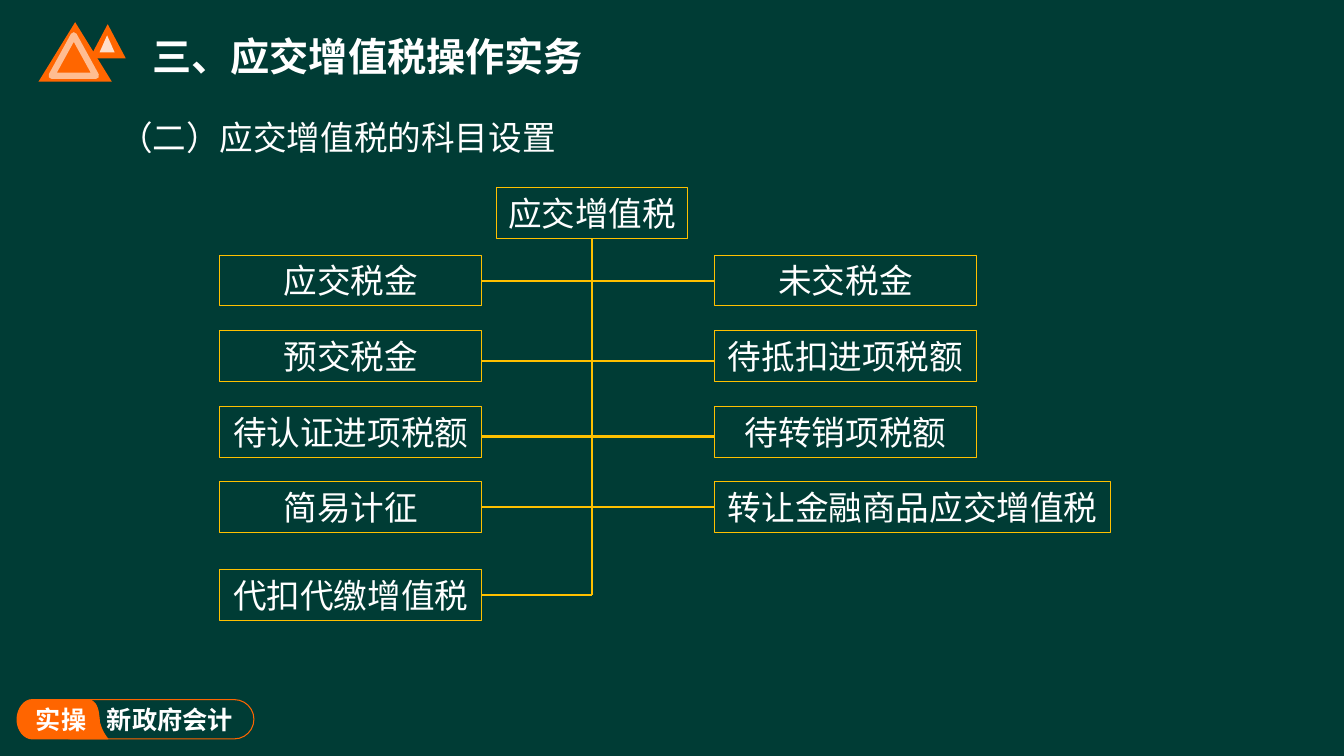
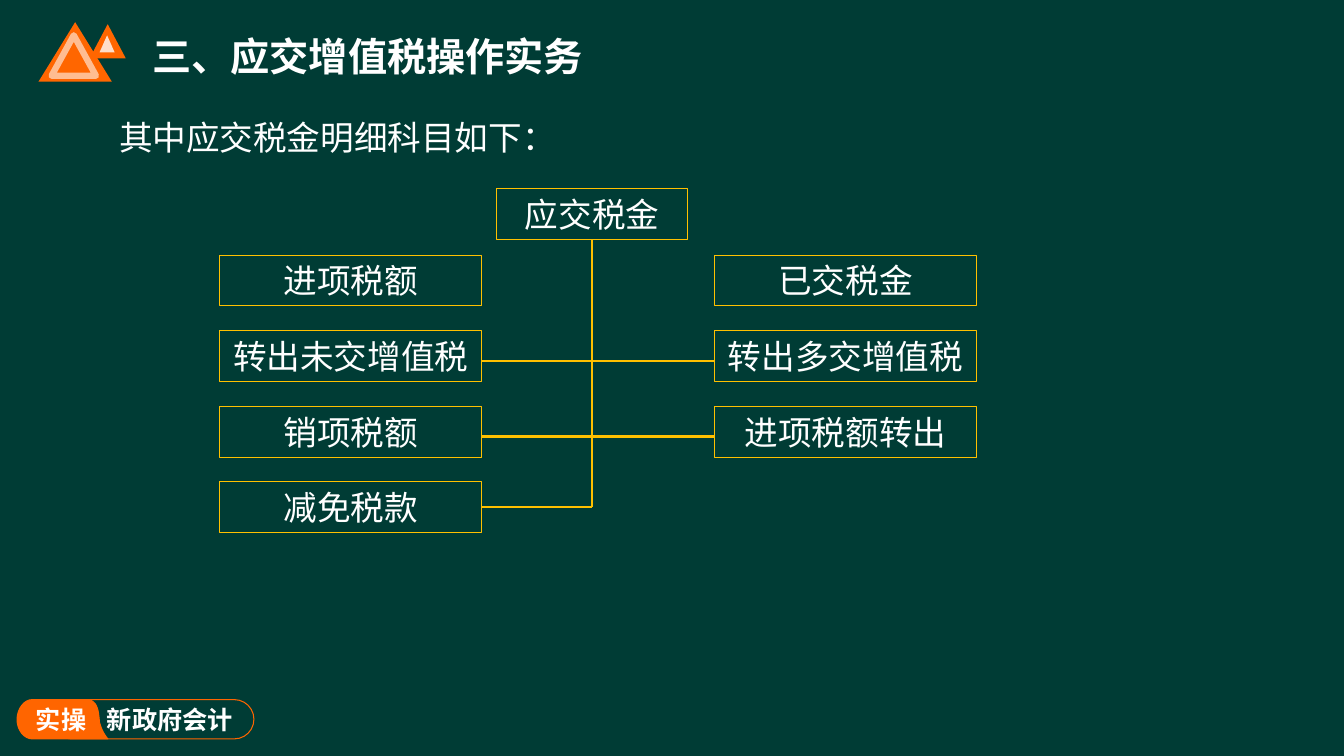
from dataclasses import dataclass

from lxml.etree import SubElement
from pptx import Presentation
from pptx.dml.color import RGBColor as Rgb
from pptx.enum.shapes import MSO_CONNECTOR as Link, MSO_SHAPE as Kind
from pptx.enum.text import MSO_ANCHOR as Anchor, PP_ALIGN as Align
from pptx.oxml.ns import qn
from pptx.util import Cm, Pt

FONT = "Noto Sans CJK SC"
HUES = {"back": "003C35", "text": "FFFFFF", "wire": "FFC000",
        "badge": "FF6500", "peak": "FF6600"}

# Tree geometry in cm
BOX_H = 1.28
BOX_W = 6.6
LEFT_X, RIGHT_X = 5.54, 18.01
ROOT_X, ROOT_W = 12.52, 4.8
SPINE_X = ROOT_X + ROOT_W / 2

# Rounded tab of the badge: cubic curves, joined by straight edges
TAB = [
    ((2.51, 18.21), (2.49, 18.03), (2.49, 17.88), (2.41, 17.75)),
    ((2.41, 17.75), (2.36, 17.68), (2.29, 17.63), (2.21, 17.63)),
    ((0.81, 17.63), (0.61, 17.63), (0.43, 17.86), (0.43, 18.14)),
    ((0.43, 18.14), (0.43, 18.39), (0.61, 18.62), (0.81, 18.62)),
    ((2.72, 18.62), (2.59, 18.47), (2.54, 18.31), (2.51, 18.21)),
]


@dataclass
class Slot:
    top: float
    drop: float = 0  # wire offset below the middle of the boxes


@dataclass
class Row:
    left: str
    right: str = ""
    width: float = BOX_W
    wired: bool = True


@dataclass
class Tree:
    lead: str
    root: str
    top: float
    rows: list[Row]


@dataclass
class Peak:
    x: float
    y: float
    w: float
    h: float
    fill: str = "peak"
    line: str = ""
    alpha: int = 100


SLOTS = [Slot(6.43), Slot(8.33, 0.12), Slot(10.24, 0.12), Slot(12.14), Slot(14.35)]

PEAKS = [
    Peak(0.97, 0.56, 1.85, 1.5),
    Peak(2.26, 0.61, 0.91, 0.86),
    Peak(1.3, 0.89, 1.12, 1.02, line="text", alpha=57),
    Peak(2.51, 0.89, 0.38, 0.43, fill="text", alpha=79),
]

TREES = [
    Tree("（二）应交增值税的科目设置", "应交增值税", 4.72, [
        Row("应交税金", "未交税金"),
        Row("预交税金", "待抵扣进项税额"),
        Row("待认证进项税额", "待转销项税额"),
        Row("简易计征", "转让金融商品应交增值税", width=9.98),
        Row("代扣代缴增值税"),
    ]),
    Tree("其中应交税金明细科目如下：", "应交税金", 4.75, [
        Row("进项税额", "已交税金", wired=False),
        Row("转出未交增值税", "转出多交增值税"),
        Row("销项税额", "进项税额转出"),
        Row("减免税款"),
    ]),
]


def hue(name: str) -> Rgb:
    return Rgb.from_string(HUES[name])


def write(shape, text: str, size: float = 24, bold: bool = False, align=Align.CENTER):
    """Put one line of formatted text into a shape."""
    frame = shape.text_frame
    frame.word_wrap = True
    frame.vertical_anchor = Anchor.MIDDLE
    frame.margin_left = frame.margin_right = 0
    frame.margin_top = frame.margin_bottom = 0
    para = frame.paragraphs[0]
    para.alignment = align
    run = para.add_run()
    run.text = text
    font = run.font
    font.name, font.size, font.bold = FONT, Pt(size), bold
    font.color.rgb = hue("text")
    SubElement(run._r.get_or_add_rPr(), qn("a:ea"), typeface=FONT)


def label(slide, text: str, x: float, y: float, w: float, h: float, **style):
    write(slide.shapes.add_textbox(Cm(x), Cm(y), Cm(w), Cm(h)), text, **style)


def paint(shape, fill: str = "", line: str = "", width: float = 0.75):
    shape.shadow.inherit = False
    if fill:
        shape.fill.solid()
        shape.fill.fore_color.rgb = hue(fill)
    else:
        shape.fill.background()
    if line:
        shape.line.color.rgb = hue(line)
        shape.line.width = Pt(width)
    else:
        shape.line.fill.background()


def form(slide, kind, x: float, y: float, w: float, h: float, **look):
    shape = slide.shapes.add_shape(kind, Cm(x), Cm(y), Cm(w), Cm(h))
    paint(shape, **look)
    return shape


def box(slide, text: str, x: float, y: float, w: float):
    shape = form(slide, Kind.RECTANGLE, x, y, w, BOX_H, line="wire")
    write(shape, text)
    return shape


def wire(slide, x1: float, y1: float, x2: float, y2: float, start=None, end=None):
    """Draw a line; start and end are (shape, side) pairs to join."""
    line = slide.shapes.add_connector(Link.STRAIGHT, Cm(x1), Cm(y1), Cm(x2), Cm(y2))
    line.line.color.rgb = hue("wire")
    line.line.width = Pt(1.5)
    SubElement(line._element.spPr, qn("a:effectLst"))
    if start:
        line.begin_connect(*start)
    if end:
        line.end_connect(*end)


def bend(curve, steps: int = 8) -> list[tuple[int, int]]:
    """Points along a cubic curve."""
    points = []
    for i in range(steps + 1):
        t = i / steps
        parts = ((1 - t) ** 3, 3 * t * (1 - t) ** 2, 3 * t * t * (1 - t), t ** 3)
        x, y = (sum(k * p[axis] for k, p in zip(parts, curve)) for axis in (0, 1))
        points.append((Cm(x), Cm(y)))
    return points


def badge(slide):
    points = [point for curve in TAB for point in bend(curve)]
    path = slide.shapes.build_freeform(*points[0])
    path.add_line_segments(points[1:], close=True)
    paint(path.convert_to_shape(), fill="badge", line="badge")
    pill = form(slide, Kind.ROUNDED_RECTANGLE, 1.3, 17.63, 5.1, 0.99, line="badge")
    pill.adjustments[0] = 0.5
    label(slide, "实操", 0.64, 17.63, 1.8, 1.02, size=18, bold=True)
    label(slide, "新政府会计", 2.16, 17.63, 4.24, 1.02, size=18, bold=True)


def peaks(slide):
    for peak in PEAKS:
        shape = form(slide, Kind.FLOWCHART_EXTRACT, peak.x, peak.y, peak.w, peak.h,
                     fill=peak.fill, line=peak.line, width=4.5)
        if peak.line:
            SubElement(shape.line._get_or_add_ln(), qn("a:round"))
        if peak.alpha < 100:
            # The last colour is the line's, or the fill's without a line
            tint = list(shape._element.spPr.iter(qn("a:srgbClr")))[-1]
            SubElement(tint, qn("a:alpha"), val=str(peak.alpha * 1000))


def head(slide, text: str):
    title = slide.shapes.title
    title.left, title.top, title.width, title.height = Cm(3.84), Cm(0.46), Cm(23), Cm(1.88)
    write(title, text, size=28, bold=True, align=Align.LEFT)


def grow(slide, tree: Tree):
    """Draw the root, its rows of boxes and the wires."""
    root = box(slide, tree.root, ROOT_X, tree.top, ROOT_W)
    for row, slot in zip(tree.rows, SLOTS):
        y = slot.top + BOX_H / 2 + slot.drop
        left = box(slide, row.left, LEFT_X, slot.top, BOX_W)
        right = box(slide, row.right, RIGHT_X, slot.top, row.width) if row.right else None
        if row.wired:
            wire(slide, LEFT_X + BOX_W, y, RIGHT_X if right else SPINE_X, y,
                 start=None if slot.drop else (left, 3),
                 end=(right, 1) if right and not slot.drop else None)
    wire(slide, SPINE_X, tree.top + BOX_H, SPINE_X, y, start=(root, 2))


def main():
    deck = Presentation()
    deck.slide_width, deck.slide_height = Cm(33.87), Cm(19.05)
    back = deck.slide_master.background.fill
    back.solid()
    back.fore_color.rgb = hue("back")
    for tree in TREES:
        slide = deck.slides.add_slide(deck.slide_layouts[5])
        badge(slide)
        peaks(slide)
        head(slide, "三、应交增值税操作实务")
        label(slide, tree.lead, 3, 2.75, 23, 1.4, align=Align.LEFT)
        grow(slide, tree)
    deck.save("out.pptx")


if __name__ == "__main__":
    main()
